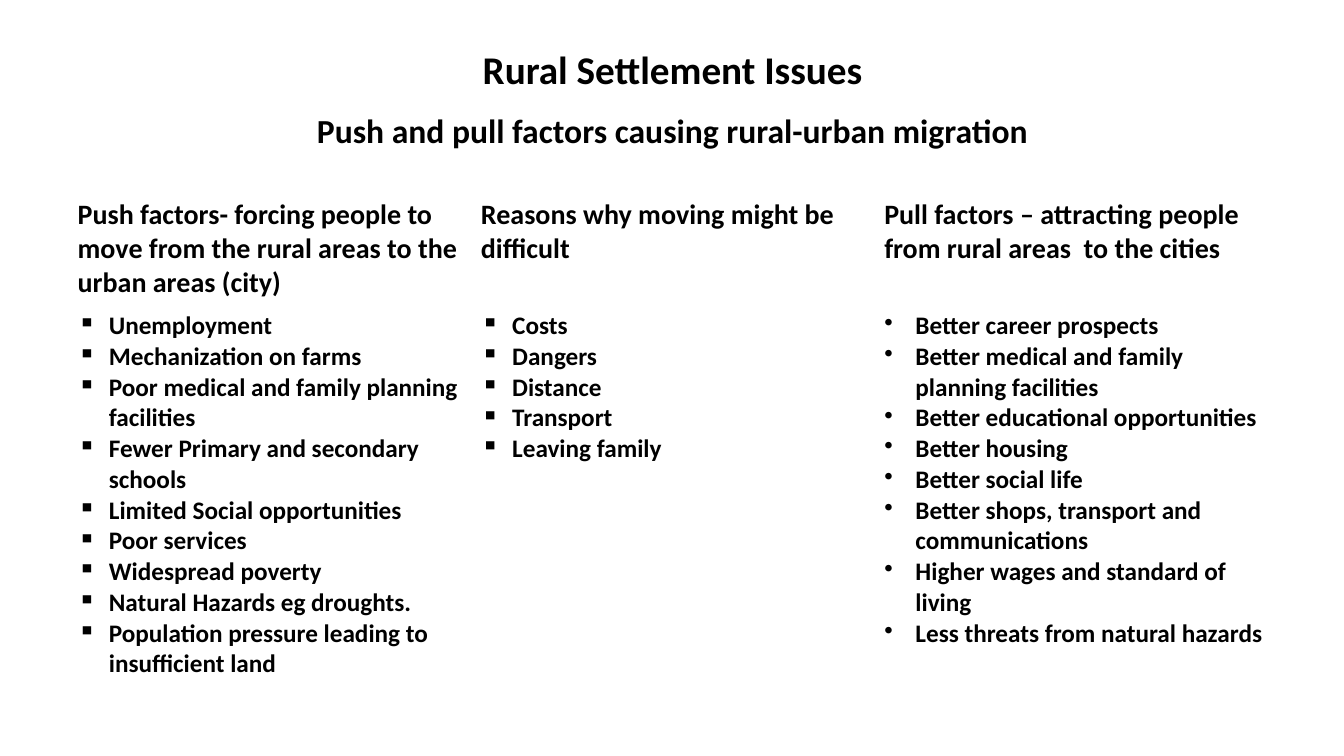
import pptx
import pptx.util
import pptx.dml.color
import pptx.enum.text
from dataclasses import dataclass
from lxml import etree
from pptx.oxml.ns import qn

Inches = pptx.util.Inches
Align = pptx.enum.text.PP_ALIGN
Anchor = pptx.enum.text.MSO_ANCHOR


@dataclass(frozen=True)
class Theme:
    font: str = "Calibri"
    ink: str = "000000"
    paper: str = "FFFFFF"
    title: int = 28
    lead: int = 24
    head: int = 20
    body: int = 18


theme = Theme()
subhead = "Push and pull factors causing rural-urban migration"
factors = [
    ("Push factors- forcing people to move from the rural areas to the urban areas (city)", "▪", [
        "Unemployment",
        "Mechanization on farms",
        "Poor medical and family planning facilities",
        "Fewer Primary and secondary schools",
        "Limited Social opportunities",
        "Poor services",
        "Widespread poverty",
        "Natural Hazards eg droughts.",
        "Population pressure leading to insufficient land",
    ]),
    ("Reasons why moving might be difficult", "▪", [
        "Costs",
        "Dangers",
        "Distance",
        "Transport",
        "Leaving family",
    ]),
    ("Pull factors – attracting people from rural areas  to the cities", "•", [
        "Better career prospects",
        "Better medical and family planning facilities",
        "Better educational opportunities",
        "Better housing",
        "Better social life",
        "Better shops, transport and communications",
        "Higher wages and standard of living",
        "Less threats from natural hazards",
    ]),
]


def style(frame, size, align=Align.LEFT):
    """Give every run in the frame the bold slide font."""
    for para in frame.paragraphs:
        para.alignment = align
        for run in para.runs:
            run.font.name = theme.font
            run.font.size = pptx.util.Pt(size)
            run.font.bold = True
            run.font.color.rgb = pptx.dml.color.RGBColor.from_string(theme.ink)


def bullet(para, mark):
    props = para._p.get_or_add_pPr()
    props.set("marL", str(Inches(0.31)))
    props.set("indent", str(-Inches(0.31)))
    etree.SubElement(props, qn("a:buChar")).set("char", mark)


deck = pptx.Presentation()
deck.slide_width = Inches(13.33)
deck.slide_height = Inches(7.5)
slide = deck.slides.add_slide(deck.slide_layouts[5])

title = slide.shapes.title
title.left, title.top = Inches(0.67), Inches(0.3)
title.width, title.height = Inches(12), Inches(0.76)
title.text_frame.text = "Rural Settlement Issues"
title.text_frame.vertical_anchor = Anchor.MIDDLE
style(title.text_frame, theme.title, Align.CENTER)

# The default table style supplies the white rules between cells.
table = slide.shapes.add_table(
    3, len(factors), Inches(0.67), Inches(1.06), Inches(12), Inches(5.61)
).table
for row, height in zip(table.rows, (0.85, 1.05, 3.71)):
    row.height = Inches(height)
for cell in table.iter_cells():
    cell.fill.solid()
    cell.fill.fore_color.rgb = pptx.dml.color.RGBColor.from_string(theme.paper)

banner = table.cell(0, 0)
banner.merge(table.cell(0, len(factors) - 1))
banner.text_frame.text = subhead
style(banner.text_frame, theme.lead, Align.CENTER)

for col, (head, mark, items) in enumerate(factors):
    table.columns[col].width = Inches(4)
    top = table.cell(1, col).text_frame
    top.text = head
    style(top, theme.head)
    points = table.cell(2, col).text_frame
    points.text = "\n".join(items)
    for para in points.paragraphs:
        bullet(para, mark)
    style(points, theme.body)

deck.save("out.pptx")
